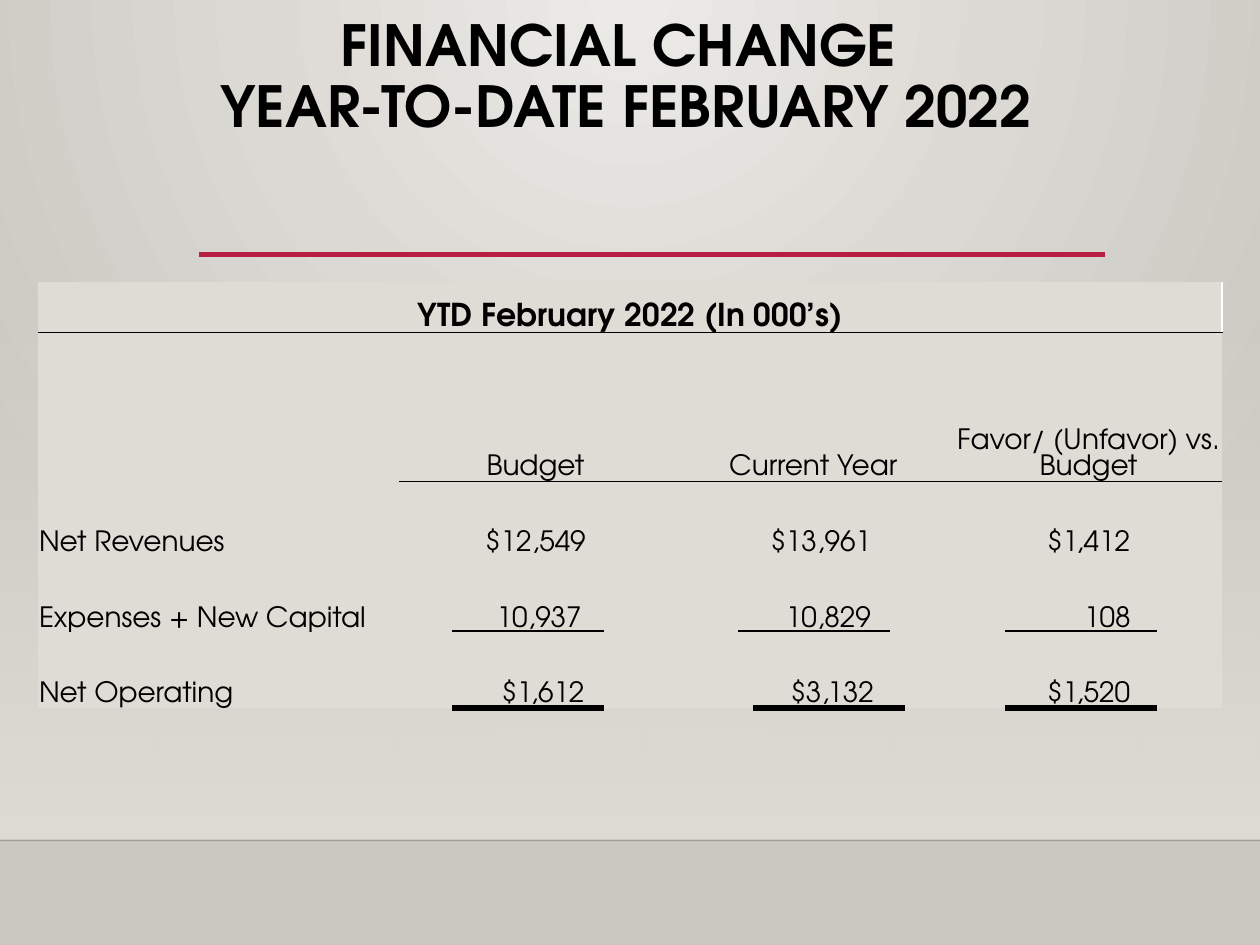
import pptx
import pptx.dml.color
import pptx.enum.shapes
import pptx.enum.text
import pptx.oxml
import pptx.oxml.ns
import pptx.util
from lxml import etree

COLORS = {"ink": "000000", "rule": "000001", "accent": "B71E42", "panel": "DFDBD5",
          "light": "ECEAE7", "dark": "CAC7C1", "white": "FFFFFF"}
FONT = "TeX Gyre Adventor"
UNIT = pptx.util.Inches(0.1)
COLUMNS = [28.7, 21.6, 22.5, 21.2]
ROWS = [4, 5, 3.4, 3.4, 6, 6, 6]
HEADINGS = ["Budget", "Current Year", "Favor/ (Unfavor) vs. Budget"]
FIGURES = [
    ("Net Revenues", [("$12,549", 0), ("$13,961", 2), ("$1,412", 0)]),
    ("Expenses + New Capital", [("10,937", 1), ("10,829", 4), ("108", 5)]),
    ("Net Operating", [("$1,612", 2), ("$3,132", 5), ("$1,520", 0)]),
]
INDENT = 0.6
ALIGN = pptx.enum.text.PP_ALIGN
qn = pptx.oxml.ns.qn


def grid(n):
    return round(n * UNIT)


def rgb(name):
    return pptx.dml.color.RGBColor.from_string(COLORS[name])


def add_alpha(element, percent):
    color = next(element.iter(qn("a:srgbClr")))
    etree.SubElement(color, qn("a:alpha"), val=str(percent * 1000))


def set_gradient(fill, start, end):
    fill.gradient()
    for stop, position, name in zip(fill.gradient_stops, (0, 1), (start, end)):
        stop.position = position
        stop.color.rgb = rgb(name)


def add_background(s):
    set_gradient(s.background.fill, "light", "dark")
    gradient = next(s.element.iter(qn("a:gradFill")))
    gradient.remove(gradient.find(qn("a:lin")))
    circle = etree.SubElement(gradient, qn("a:path"), path="circle")
    etree.SubElement(circle, qn("a:fillToRect"), l="43000", t="0", r="43000", b="100000")


def add_wall(s):
    sp = s.shapes.add_shape(pptx.enum.shapes.MSO_SHAPE.RECTANGLE,
                            0, grid(22), grid(100), grid(44.6))
    sp.shadow.inherit = False
    sp.line.fill.background()
    set_gradient(sp.fill, "panel", "panel")
    sp.fill.gradient_angle = 270
    add_alpha(sp.element.spPr, 0)


def add_rule(s, x, y, length, width, color="ink"):
    line = s.shapes.add_connector(pptx.enum.shapes.MSO_CONNECTOR.STRAIGHT,
                                  grid(x), grid(y), grid(x + length), grid(y))
    line.line.width = pptx.util.Pt(width)
    line.line.color.rgb = rgb(color)
    etree.SubElement(line.element.spPr, qn("a:effectLst"))
    return line


def format_paragraph(p, size, bold, align):
    p.alignment = align
    for r in p.runs:
        r.font.name = FONT
        r.font.size = pptx.util.Pt(size)
        r.font.bold = bold
        r.font.color.rgb = rgb("ink")


def add_title(s):
    tf = s.shapes.add_textbox(grid(8.1), grid(0.9), grid(82), grid(11.3)).text_frame
    tf.word_wrap = True
    tf.text = "FINANCIAL CHANGE\nYEAR-TO-DATE FEBRUARY 2022"
    for p in tf.paragraphs:
        format_paragraph(p, 32.4, True, ALIGN.CENTER)
        p.line_spacing = 0.9
    tf.paragraphs[1]._p.get_or_add_pPr().set("marL", str(grid(1.2)))


def set_borders(cell, **sides):
    tc_pr = cell._tc.get_or_add_tcPr()
    present = [side for side in "LRTB" if side in sides]
    for index, side in enumerate(present):
        ln = etree.Element(qn(f"a:ln{side}"), w=str(pptx.util.Pt(1)))
        fill = etree.SubElement(ln, qn("a:solidFill"))
        etree.SubElement(fill, qn("a:srgbClr"), val=COLORS[sides[side]])
        tc_pr.insert(index, ln)


def set_cell(cell, text, size=16, bold=False, align=ALIGN.CENTER, indent=0):
    cell.text = text
    cell.margin_left = grid(0.1 + indent * INDENT)
    format_paragraph(cell.text_frame.paragraphs[0], size, bold, align)


def add_figures(s):
    table = s.shapes.add_table(len(ROWS), len(COLUMNS), grid(3), grid(22.4),
                               grid(sum(COLUMNS)), grid(sum(ROWS))).table
    table.first_row = table.horz_banding = False
    style = next(table._tbl.iter(qn("a:tableStyleId")))
    style.text = "{2D5ABB26-0587-4C30-8999-92F81FD0307C}"
    for column, width in zip(table.columns, COLUMNS):
        column.width = grid(width)
    for row, height in zip(table.rows, ROWS):
        row.height = grid(height)
    for cell in (c for row in table.rows for c in row.cells):
        cell.fill.solid()
        cell.fill.fore_color.rgb = rgb("panel")
        cell.vertical_anchor = pptx.enum.text.MSO_ANCHOR.BOTTOM
        cell.margin_left = cell.margin_right = cell.margin_top = grid(0.1)
        cell.margin_bottom = 0

    banner = table.cell(0, 0)
    banner.merge(table.cell(0, 3))
    set_cell(banner, "YTD February 2022 (In 000’s)", 18, True)
    set_borders(banner, R="white", B="ink")
    for c, heading in enumerate(HEADINGS, 1):
        head = table.cell(1, c)
        head.merge(table.cell(3, c))
        set_cell(head, heading)
        set_borders(head, T="ink", B="ink")
    for r, (label, values) in enumerate(FIGURES, 4):
        set_cell(table.cell(r, 0), label, align=ALIGN.LEFT)
        for c, (value, indent) in enumerate(values, 1):
            set_cell(table.cell(r, c), value, indent=indent)


def main():
    prs = pptx.Presentation()
    prs.slide_width, prs.slide_height = grid(100), grid(75)
    s = prs.slides.add_slide(prs.slide_layouts[6])
    add_background(s)
    add_wall(s)
    floor = add_rule(s, 0, 66.7, 100, 1, "rule")
    add_alpha(floor.element.spPr, 20)
    add_rule(s, 15.8, 20.2, 71.9, 2.5, "accent")
    add_title(s)
    add_figures(s)
    for total_x, subtotal_x in ((35.9, 35.9), (59.8, 58.6), (79.8, 79.8)):
        add_rule(s, total_x, 56.2, 12, 3)
        add_rule(s, subtotal_x, 50.1, 12, 1.25)
    prs.save("out.pptx")


if __name__ == "__main__":
    main()
